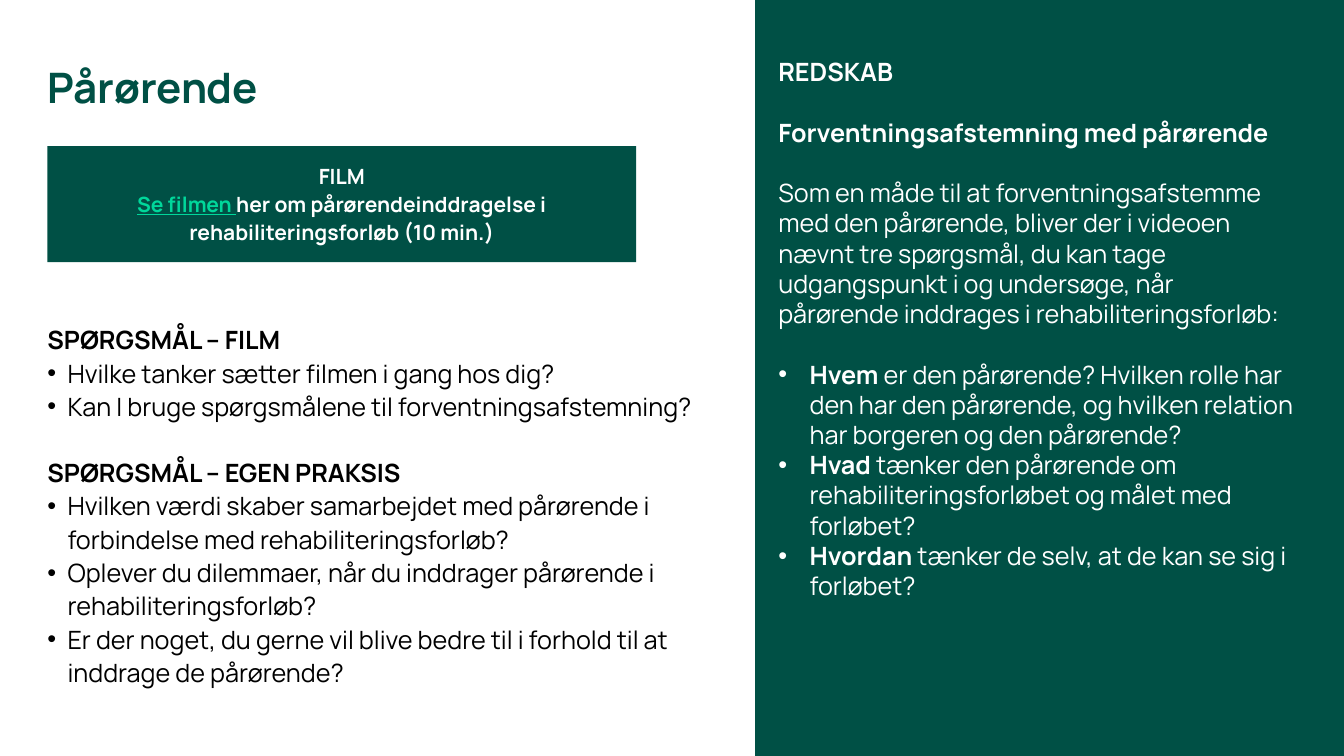
import pptx
import pptx.util
import pptx.dml.color
import pptx.enum.shapes
import pptx.enum.text
import lxml.etree

Inches, Pt = pptx.util.Inches, pptx.util.Pt
RGB = pptx.dml.color.RGBColor
ALIGN = pptx.enum.text.PP_ALIGN
ANCHOR = pptx.enum.text.MSO_ANCHOR
FIT = pptx.enum.text.MSO_AUTO_SIZE
RECT = pptx.enum.shapes.MSO_SHAPE.RECTANGLE
NS = "{http://schemas.openxmlformats.org/drawingml/2006/main}"
COLORS = {"green": "005045", "mint": "00D79B", "white": "FFFFFF", "black": "000000"}


def place(shape, left, top, width, height):
    box = {"left": left, "top": top, "width": width, "height": height}
    for name, value in box.items():
        setattr(shape, name, Inches(value))


def write(frame, items, size, color, space=1.0, align=ALIGN.LEFT, indent=0, inset=0, fit=FIT.NONE):
    look = {"margin_left": 0, "margin_right": 0, "margin_top": Inches(inset),
            "margin_bottom": 0, "word_wrap": True, "auto_size": fit,
            "vertical_anchor": ANCHOR.TOP}
    for name, value in look.items():
        setattr(frame, name, value)
    for i, (bullet, before, runs) in enumerate(items):
        para = frame.paragraphs[0] if i == 0 else frame.add_paragraph()
        form = {"alignment": align, "line_spacing": space,
                "space_before": Pt(before), "space_after": Pt(0)}
        for name, value in form.items():
            setattr(para, name, value)
        props = para._p.get_or_add_pPr()
        step = Inches(indent) if bullet else 0
        props.set("marL", str(step))
        props.set("indent", str(-step))
        if bullet:
            lxml.etree.SubElement(props, NS + "buFont", typeface="Arial")
            lxml.etree.SubElement(props, NS + "buChar", char="•")
        else:
            lxml.etree.SubElement(props, NS + "buNone")
        for text, bold, *tint in runs:
            run = para.add_run()
            run.text = text
            style = {"name": "Manrope", "size": Pt(size), "bold": bold, "underline": bool(tint)}
            for name, value in style.items():
                setattr(run.font, name, value)
            run.font.color.rgb = RGB.from_string(COLORS[tint[0] if tint else color])


deck = pptx.Presentation()
deck.slide_width = Inches(13.33)
deck.slide_height = Inches(7.5)
slide = deck.slides.add_slide(deck.slide_layouts[1])

title = slide.shapes.title
place(title, 0.47, 0.69, 9.19, 0.62)
write(title.text_frame, [(False, 0, [("Pårørende", True)])], 30, "green", 0.83)

body = slide.placeholders[1]
place(body, 0.47, 3.19, 6.54, 3.62)
tasks = [
    (False, 0, [("SPØRGSMÅL – FILM", True)]),
    (True, 0, [("Hvilke tanker sætter filmen i gang hos dig?", False)]),
    (True, 0, [("Kan I bruge spørgsmålene til forventningsafstemning?", False)]),
    (False, 23.7, [("SPØRGSMÅL – EGEN PRAKSIS", True)]),
    (True, 0, [("Hvilken værdi skaber samarbejdet med pårørende i forbindelse med rehabiliteringsforløb?", False)]),
    (True, 0, [("Oplever du dilemmaer, når du inddrager pårørende i rehabiliteringsforløb?", False)]),
    (True, 0, [("Er der noget, du gerne vil blive bedre til i forhold til at inddrage de pårørende?", False)]),
]
write(body.text_frame, tasks, 18, "black", 1.1, indent=0.2)

blocks = []
for area in [(7.49, 0, 5.84, 7.5), (0.47, 1.45, 5.84, 1.15)]:
    block = slide.shapes.add_shape(RECT, *map(Inches, area))
    block.shadow.inherit = False
    block.fill.solid()
    block.fill.fore_color.rgb = RGB.from_string(COLORS["green"])
    block.line.fill.background()
    blocks.append(block)
panel, film = blocks

clip = [
    (False, 0, [("FILM", True)]),
    (False, 0, [("Se filmen ", True, "mint"),
                ("her om pårørendeinddragelse i rehabiliteringsforløb (10 min.)", True)]),
]
write(film.text_frame, clip, 15, "white", 1.1, ALIGN.CENTER, inset=0.15)

tool = slide.shapes.add_textbox(*map(Inches, (7.72, 0.56, 5.14, 5.79)))
steps = [
    (False, 0, [("REDSKAB", True)]),
    (False, 21.6, [("Forventningsafstemning med pårørende", True)]),
    (False, 21.6, [("Som en måde til at forventningsafstemme med den pårørende, bliver der i videoen "
                    "nævnt tre spørgsmål, du kan tage udgangspunkt i og undersøge, når pårørende "
                    "inddrages i rehabiliteringsforløb:", False)]),
    (True, 21.6, [("Hvem", True), (" er den pårørende? Hvilken rolle har den har den pårørende, "
                                   "og hvilken relation har borgeren og den pårørende?", False)]),
    (True, 0, [("Hvad", True), (" tænker den pårørende om rehabiliteringsforløbet og målet med forløbet?", False)]),
    (True, 0, [("Hvordan", True), (" tænker de selv, at de kan se sig i forløbet?", False)]),
]
write(tool.text_frame, steps, 18, "white", indent=0.31, fit=FIT.SHAPE_TO_FIT_TEXT)

deck.save("out.pptx")
